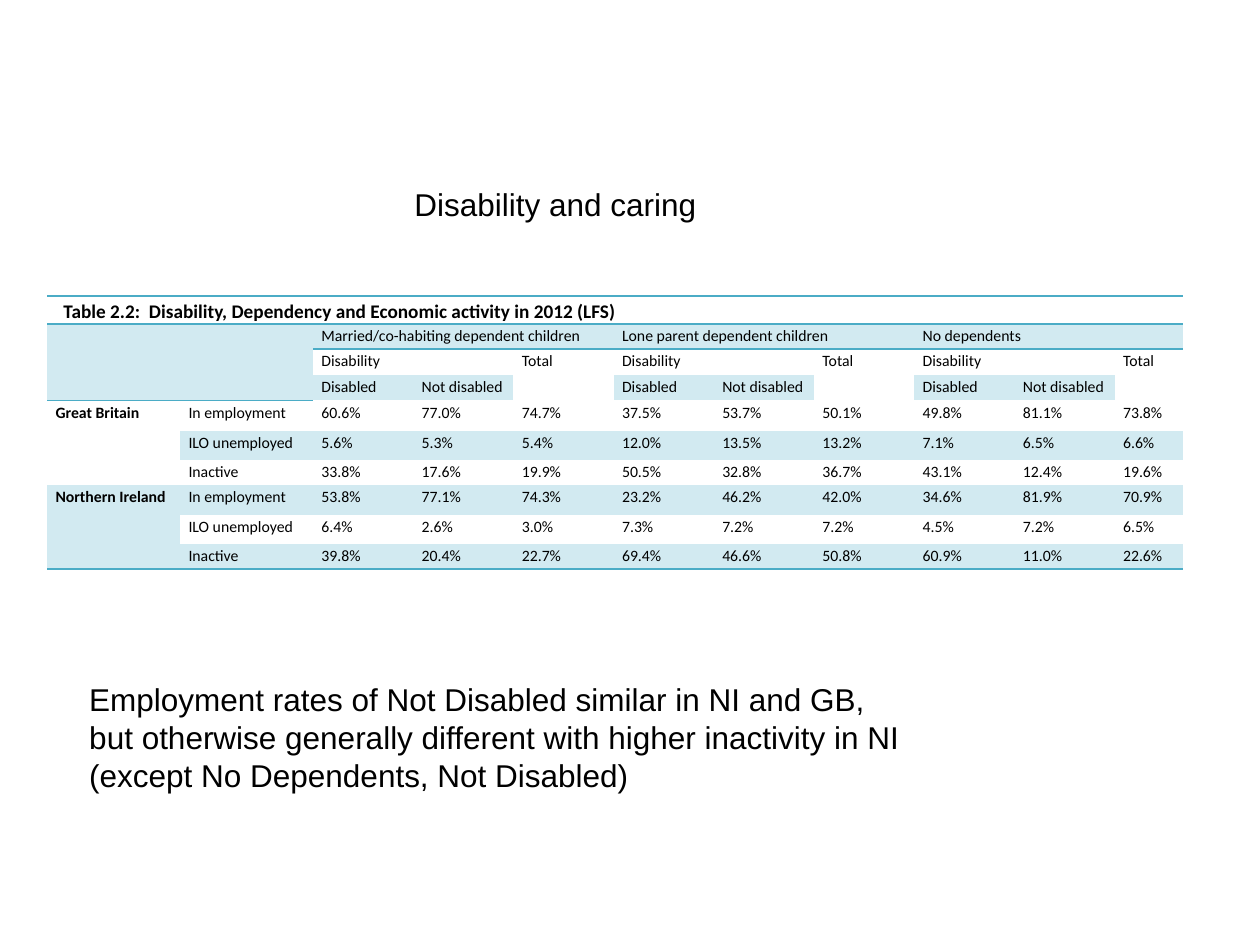
from lxml.etree import SubElement
from pptx import Presentation
from pptx.dml.color import RGBColor
from pptx.enum.text import MSO_ANCHOR, MSO_AUTO_SIZE as AutoSize, PP_ALIGN
from pptx.oxml.ns import qn
from pptx.util import Cm, Pt

BLACK = RGBColor(0x00, 0x00, 0x00)
BAND = RGBColor(0xD2, 0xEA, 0xF1)
RULE = RGBColor(0x4B, 0xAC, 0xC6)
PLAIN_TABLE_STYLE = "{2D5ABB26-0587-4C30-8999-92F81FD0307C}"

TITLE = "Disability and caring"
CAPTION = "Table 2.2:  Disability, Dependency and Economic activity in 2012 (LFS)"
COMMENTS = [
    "Employment rates of Not Disabled similar in NI and GB,",
    "but otherwise generally different with higher inactivity in NI",
    "(except No Dependents, Not Disabled)",
]
FAMILIES = [
    "Married/co-habiting dependent children",
    "Lone parent dependent children",
    "No dependents",
]
ACTIVITIES = ["In employment", "ILO unemployed", "Inactive"]
RATES = {
    "Great Britain": [
        [60.6, 77.0, 74.7, 37.5, 53.7, 50.1, 49.8, 81.1, 73.8],
        [5.6, 5.3, 5.4, 12.0, 13.5, 13.2, 7.1, 6.5, 6.6],
        [33.8, 17.6, 19.9, 50.5, 32.8, 36.7, 43.1, 12.4, 19.6],
    ],
    "Northern Ireland": [
        [53.8, 77.1, 74.3, 23.2, 46.2, 42.0, 34.6, 81.9, 70.9],
        [6.4, 2.6, 3.0, 7.3, 7.2, 7.2, 4.5, 7.2, 6.5],
        [39.8, 20.4, 22.7, 69.4, 46.6, 50.8, 60.9, 11.0, 22.6],
    ],
}
COLUMN_WIDTHS = [2.68] * 2 + [2.02] * 8 + [1.37]
ROW_HEIGHTS = [0.56, 0.51, 0.51, 0.52, 0.62, 0.58, 0.51, 0.6, 0.58, 0.51]


def table_content():
    texts = {(0, 0): CAPTION}
    spans = {(0, 0): (1, 11), (1, 0): (3, 2)}
    for index, family in enumerate(FAMILIES):
        column = 2 + 3 * index
        texts |= {
            (1, column): family,
            (2, column): "Disability",
            (2, column + 2): "Total",
            (3, column): "Disabled",
            (3, column + 1): "Not disabled",
        }
        spans |= {(1, column): (1, 3), (2, column): (1, 2), (2, column + 2): (2, 1)}
    for index, (region, region_rates) in enumerate(RATES.items()):
        top = 4 + 3 * index
        texts[top, 0] = region
        spans[top, 0] = (3, 1)
        for row, (activity, rates) in enumerate(zip(ACTIVITIES, region_rates), top):
            texts[row, 1] = activity
            for column, rate in enumerate(rates, 2):
                texts[row, column] = f"{rate:.1f}%"
    return texts, spans


class SlideBuilder:
    text_font = {"name": "Arial", "size": Pt(18), "bold": False}
    table_font = {"name": "Calibri", "size": Pt(9), "bold": False}

    def __init__(self, presentation):
        self.slide = presentation.slides.add_slide(presentation.slide_layouts[5])

    def format_font(self, font, values):
        for name, value in values.items():
            setattr(font, name, value)
        font.color.rgb = BLACK

    def fill_text(self, shape, lines):
        frame = shape.text_frame
        frame.text = "\n".join(lines)
        values = {
            "word_wrap": False,
            "auto_size": AutoSize.SHAPE_TO_FIT_TEXT,
            "vertical_anchor": MSO_ANCHOR.TOP,
        }
        for name, value in values.items():
            setattr(frame, name, value)
        for paragraph in frame.paragraphs:
            paragraph.alignment = PP_ALIGN.LEFT
            self.format_font(paragraph.runs[0].font, self.text_font)

    def title(self, text, left, top, width, height):
        shape = self.slide.shapes.title
        shape.left, shape.top, shape.width, shape.height = left, top, width, height
        self.fill_text(shape, [text])

    def text_box(self, lines, left, top, width, height):
        shape = self.slide.shapes.add_textbox(left, top, width, height)
        self.fill_text(shape, lines)

    def border(self, cell, side):
        properties = cell._tc.get_or_add_tcPr()
        line = SubElement(properties, qn(f"a:ln{side}"), w=str(Pt(1)))
        fill = SubElement(line, qn("a:solidFill"))
        SubElement(fill, qn("a:srgbClr"), val=str(RULE))

    def cell(self, cell, text, filled, font):
        values = {
            "margin_left": Cm(0.17),
            "margin_right": Cm(0.17),
            "margin_top": 0,
            "margin_bottom": 0,
        }
        for name, value in values.items():
            setattr(cell, name, value)
        if filled:
            cell.fill.solid()
            cell.fill.fore_color.rgb = BAND
        else:
            cell.fill.background()
        paragraph = cell.text_frame.paragraphs[0]
        paragraph.line_spacing = 1.15
        if text:
            run = paragraph.add_run()
            run.text = text
            self.format_font(run.font, self.table_font | font)
        else:
            paragraph._p.get_or_add_endParaRPr().set("sz", "900")

    def table(self, texts, spans, left, top):
        frame = self.slide.shapes.add_table(
            len(ROW_HEIGHTS), len(COLUMN_WIDTHS), left, top,
            Cm(sum(COLUMN_WIDTHS)), Cm(sum(ROW_HEIGHTS)),
        )
        table = frame.table
        table.first_row = table.horz_banding = False
        table._tbl.tblPr.find(qn("a:tableStyleId")).text = PLAIN_TABLE_STYLE
        for column, width in zip(table.columns, COLUMN_WIDTHS):
            column.width = Cm(width)
        for row, height in zip(table.rows, ROW_HEIGHTS):
            row.height = Cm(height)
        for (row, column), (height, width) in spans.items():
            table.cell(row, column).merge(table.cell(row + height - 1, column + width - 1))
        last_row = len(ROW_HEIGHTS) - 1
        for row in range(len(ROW_HEIGHTS)):
            for column in range(len(COLUMN_WIDTHS)):
                cell = table.cell(row, column)
                if row in (0, 1):
                    self.border(cell, "T")
                if row == 0 or row + cell.span_height - 1 == last_row or row == last_row:
                    self.border(cell, "B")
                font = {"bold": column == 0}
                if row == 0:
                    font["size"] = Pt(11)
                filled = row % 2 == 1 and not cell.is_spanned
                self.cell(cell, texts.get((row, column)), filled, font)
        table.cell(0, 0).margin_left = Cm(0.33)


def main():
    presentation = Presentation()
    presentation.slide_width = Cm(25.4)
    presentation.slide_height = Cm(19.05)
    builder = SlideBuilder(presentation)
    builder.title(TITLE, Cm(8.1), Cm(3.61), Cm(6.25), Cm(1.02))
    builder.table(*table_content(), Cm(0.95), Cm(5.97))
    builder.text_box(COMMENTS, Cm(1.55), Cm(13.59), Cm(16.99), Cm(2.57))
    presentation.save("out.pptx")


if __name__ == "__main__":
    main()
